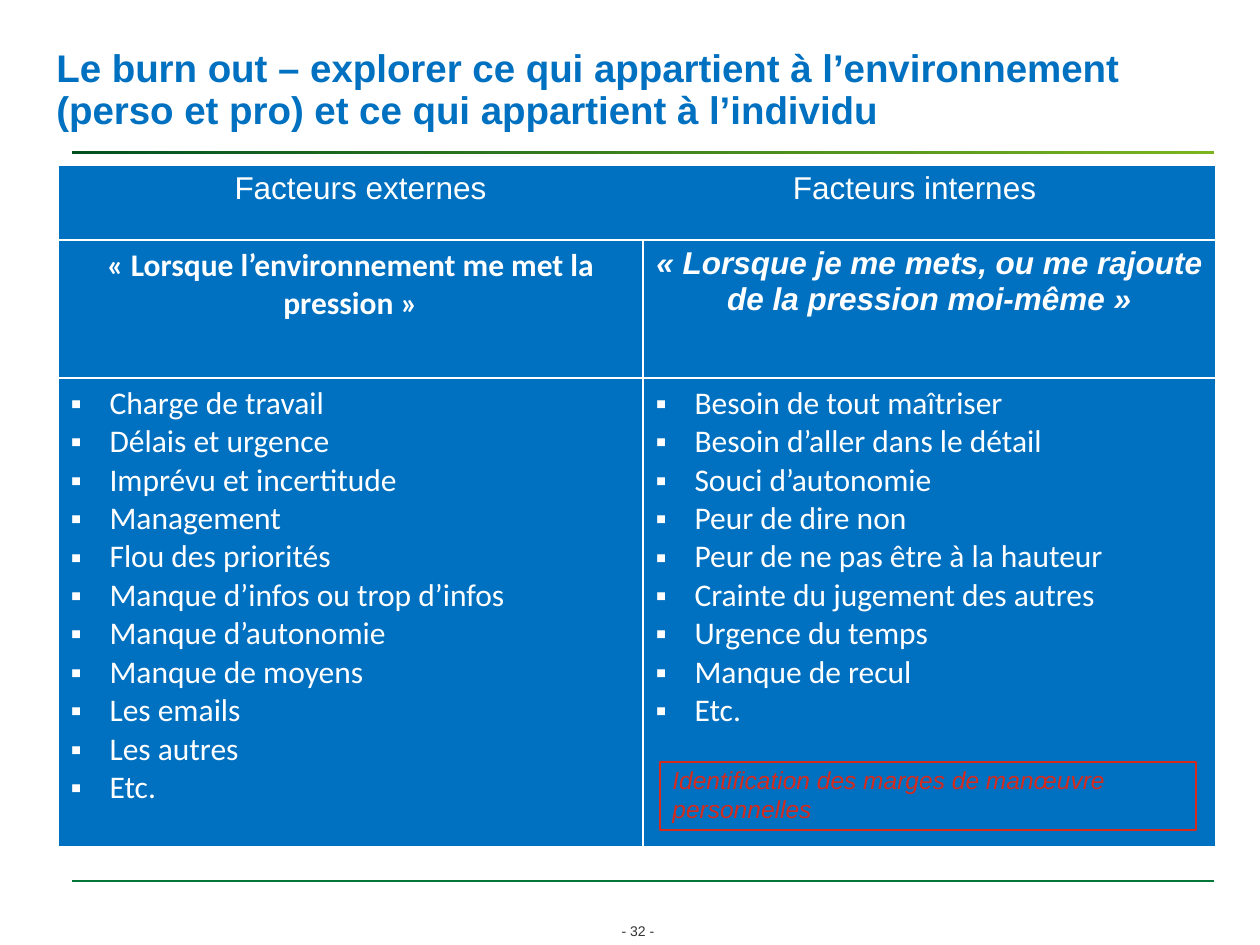
from lxml import etree
from pptx import Presentation
from pptx import util as u
from pptx.dml import color
from pptx.enum import shapes, text
from pptx.oxml import ns

BLUE, RED, WHITE, GREEN = "0070C0", "D52B1E", "FFFFFF", "04763A"
LEFT, MID = text.PP_ALIGN.LEFT, text.PP_ALIGN.CENTER
QUOTES = ["«\u00a0Lorsque l’environnement me met la pression\u00a0»",
          "«\u00a0Lorsque je me mets, ou me rajoute de la pression moi-même\u00a0»"]
LISTS = [
    ["Charge de travail", "Délais et urgence", "Imprévu et incertitude",
     "Management", "Flou des priorités", "Manque d’infos ou trop d’infos",
     "Manque d’autonomie", "Manque de moyens", "Les emails", "Les autres",
     "Etc."],
    ["Besoin de tout maîtriser", "Besoin d’aller dans le détail",
     "Souci d’autonomie", "Peur de dire non",
     "Peur de ne pas être à la hauteur", "Crainte du jugement des autres",
     "Urgence du temps", "Manque de recul", "Etc."],
]


def px(n):
    return u.Emu(round(n * 914400 / 126))


def rgb(code):
    return color.RGBColor.from_string(code)


def sub(node, tag, **attrs):
    return etree.SubElement(node, ns.qn(tag), attrs)


def style(obj, **vals):
    for key, val in vals.items():
        setattr(obj, key, val)


def write(para, words, size, tint, align=LEFT, **look):
    para.alignment = align
    run = para.add_run()
    run.text = words
    style(run.font, **{"name": "Arial", "size": u.Pt(size), **look})
    run.font.color.rgb = rgb(tint)


def label(slide, box, words, size, tint, align=LEFT, frame=None, **look):
    shape = slide.shapes.add_textbox(*map(px, box))
    style(shape.text_frame, word_wrap=True, **(frame or {}))
    write(shape.text_frame.paragraphs[0], words, size, tint, align, **look)
    return shape


def bullet(para):
    props = para._p.get_or_add_pPr()
    props.set("marL", str(px(39)))
    props.set("indent", str(-px(39)))
    sub(props, "a:buFont", typeface="Arial")
    sub(props, "a:buChar", char="▪")


def tabs(para, stops):
    group = sub(para._p.get_or_add_pPr(), "a:tabLst")
    for stop in stops:
        sub(group, "a:tab", pos=str(px(stop)), algn="ctr")


def paint(cell):
    cell.fill.solid()
    cell.fill.fore_color.rgb = rgb(BLUE)
    props = cell._tc.get_or_add_tcPr()
    for spot, side in enumerate(("a:lnL", "a:lnR", "a:lnT", "a:lnB")):
        line = etree.Element(ns.qn(side), w=str(u.Pt(1)))
        sub(sub(line, "a:solidFill"), "a:srgbClr", val=WHITE)
        props.insert(spot, line)


def header(slide, x, y, w, h):
    # Title, lowered within its box
    label(slide, (x, y, w, h),
          "Le burn out – explorer ce qui appartient à l’environnement "
          "(perso et pro) et ce qui appartient à l’individu", 22, BLUE,
          frame={"vertical_anchor": text.MSO_ANCHOR.MIDDLE,
                 "margin_top": px(40), "margin_bottom": 0},
          bold=True).text_frame.paragraphs[0].line_spacing = 0.9
    # Gradient rule
    rule = slide.shapes.add_shape(shapes.MSO_SHAPE.RECTANGLE,
                                  *map(px, (x + 28, y + 125, 1142, 3)))
    rule.shadow.inherit = False
    rule.line.fill.background()
    rule.fill.gradient()
    rule.fill.gradient_angle = 0
    for stop, tint in zip(rule.fill.gradient_stops, ("00501F", "7AB51D")):
        stop.color.rgb = rgb(tint)


def factors(slide, x, y, cols, rows):
    table = slide.shapes.add_table(
        3, 2, *map(px, (x, y, sum(cols), sum(rows)))).table
    style(table, first_row=False, horz_banding=False)
    for col, w in zip(table.columns, cols):
        col.width = px(w)
    for row, h in zip(table.rows, rows):
        row.height = px(h)
    for cell in table.iter_cells():
        paint(cell)
    # Shared heading
    table.cell(0, 0).merge(table.cell(0, 1))
    head = table.cell(0, 0).text_frame.paragraphs[0]
    write(head, "\tFacteurs externes\tFacteurs internes", 18, WHITE)
    tabs(head, (290, 844))
    # Quotes and lists
    looks = {"name": "Calibri"}, {"italic": True}
    for i, (quote, items, look) in enumerate(zip(QUOTES, LISTS, looks)):
        write(table.cell(1, i).text_frame.paragraphs[0], quote, 18, WHITE,
              MID, bold=True, **look)
        frame = table.cell(2, i).text_frame
        for j, item in enumerate(items):
            para = frame.add_paragraph() if j else frame.paragraphs[0]
            write(para, item, 18, WHITE, name="Calibri")
            bullet(para)


def note(slide, *box):
    shape = label(slide, box,
                  "Identification des marges de manœuvre personnelles", 14, RED,
                  frame={"vertical_anchor": text.MSO_ANCHOR.BOTTOM},
                  italic=True)
    shape.line.color.rgb = rgb(RED)
    shape.line.width = u.Pt(0.75)


def footer(slide, x, y, w):
    line = slide.shapes.add_connector(shapes.MSO_CONNECTOR.STRAIGHT,
                                      *map(px, (x, y, x + w, y)))
    line.line.color.rgb = rgb(GREEN)
    line.line.width = u.Pt(0.75)
    sub(line._element.spPr, "a:effectLst")
    label(slide, (x + 525, y + 35, 82, 29), "- 32 -", 8, "333333", MID)


def main():
    deck = Presentation()
    style(deck, slide_width=px(1260), slide_height=px(945))
    slide = deck.slides.add_slide(deck.slide_layouts[6])
    footer(slide, 72, 881, 1142)
    header(slide, 44, 26, 1170, 90)
    factors(slide, 58, 165, (585, 573), (75, 138, 469))
    note(slide, 660, 762, 536, 68)
    deck.save("out.pptx")


if __name__ == "__main__":
    main()
